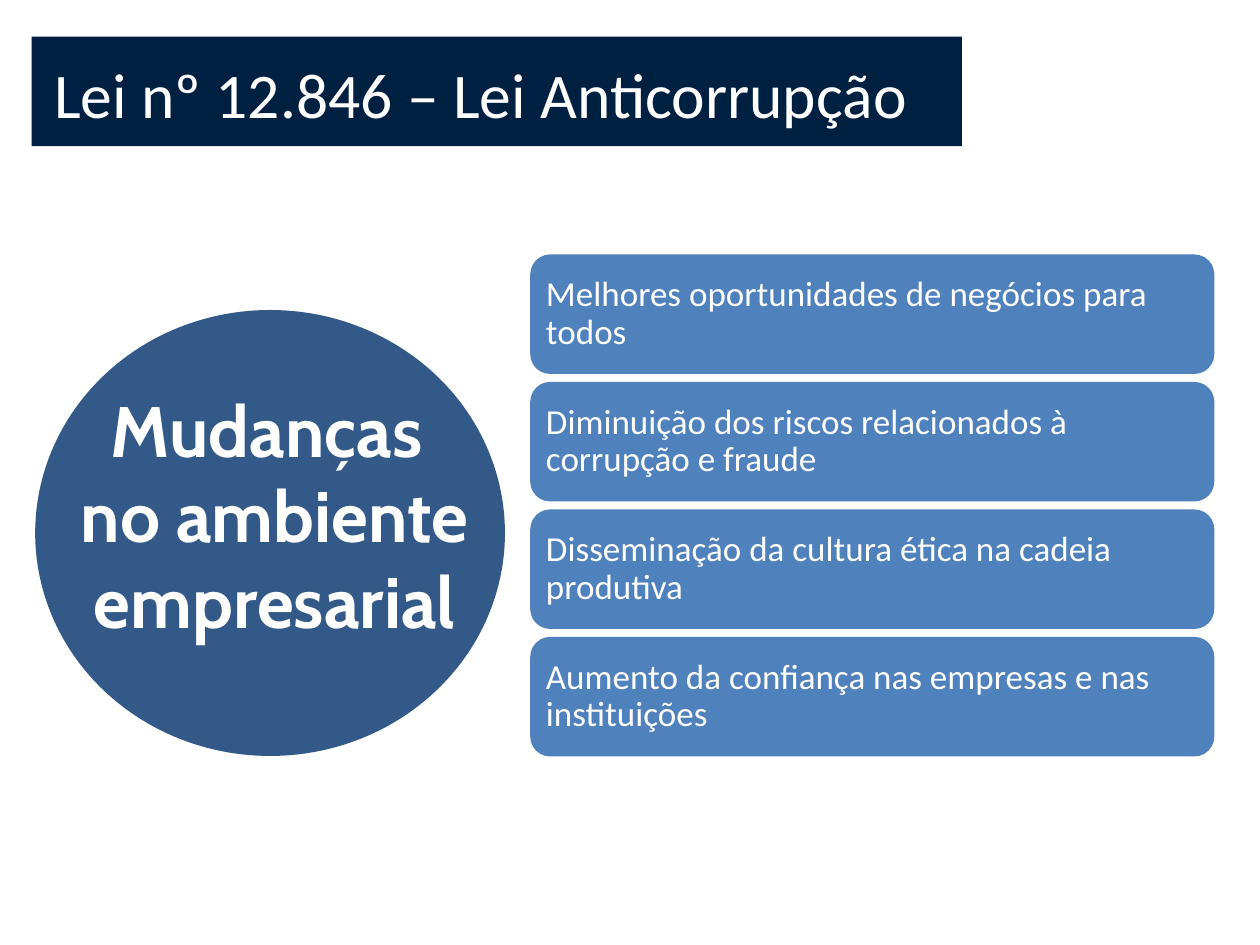
import pptx
import pptx.util
import pptx.dml.color
import pptx.enum.shapes
import pptx.enum.text
import pptx.oxml.ns
import lxml.etree

Cm = pptx.util.Cm
RGB = pptx.dml.color.RGBColor
SHAPE = pptx.enum.shapes.MSO_SHAPE
ALIGN = pptx.enum.text.PP_ALIGN
ANCHOR = pptx.enum.text.MSO_ANCHOR

NAVY = RGB(0x00, 0x20, 0x42)
DEEP = RGB(0x1F, 0x49, 0x7D)
BLUE = RGB(0x4F, 0x81, 0xBD)
WHITE = RGB(0xFF, 0xFF, 0xFF)

GAINS = [
    "Melhores oportunidades de negócios para todos",
    "Diminuição dos riscos relacionados à corrupção e fraude",
    "Disseminação da cultura ética na cadeia produtiva",
    "Aumento da confiança nas empresas e nas instituições",
]


def write(frame, text, size, font="Calibri", bold=False, align=ALIGN.LEFT,
          anchor=ANCHOR.TOP, pad=None, space=None):
    """Fill a text frame, one paragraph for each line of text."""
    frame.word_wrap = True
    frame.vertical_anchor = anchor
    if pad is not None:
        frame.margin_left = frame.margin_right = pad
        frame.margin_top = frame.margin_bottom = pad
    for i, line in enumerate(text.split("\n")):
        para = frame.add_paragraph() if i else frame.paragraphs[0]
        para.alignment = align
        para.line_spacing = space
        run = para.add_run()
        run.text = line
        run.font.name = font
        run.font.size = pptx.util.Pt(size)
        run.font.bold = bold
        run.font.color.rgb = WHITE


def label(slide, box, text, **style):
    frame = slide.shapes.add_textbox(*map(Cm, box)).text_frame
    write(frame, text, **style)


def block(slide, kind, box, color, alpha=None):
    """Add a flat shape without outline; alpha is opacity in percent."""
    shape = slide.shapes.add_shape(kind, *map(Cm, box))
    shape.shadow.inherit = False
    shape.line.fill.background()
    shape.fill.solid()
    shape.fill.fore_color.rgb = color
    if alpha is not None:
        tone = shape.fill._xPr.find(".//" + pptx.oxml.ns.qn("a:srgbClr"))
        node = lxml.etree.SubElement(tone, pptx.oxml.ns.qn("a:alpha"))
        node.set("val", str(alpha * 1000))
    return shape


def title(slide):
    block(slide, SHAPE.RECTANGLE, (0.64, 0.74, 18.75, 2.21), NAVY)
    label(slide, (0.84, 0.99, 18.31, 2.57),
          "Lei nº 12.846 – Lei Anticorrupção", size=36.3)


def theme(slide):
    block(slide, SHAPE.OVAL, (0.71, 6.25, 9.47, 8.99), DEEP, alpha=91)
    label(slide, (0.61, 7.65, 9.86, 6.25),
          "Mudanças \nno ambiente empresarial",
          size=40.8, font="Cabin", bold=True, align=ALIGN.CENTER)


def cards(slide, top=5.13, step=2.57):
    for i, gain in enumerate(GAINS):
        box = (10.69, top + i * step, 13.79, 2.41)
        card = block(slide, SHAPE.ROUNDED_RECTANGLE, box, BLUE)
        write(card.text_frame, gain, size=20, anchor=ANCHOR.MIDDLE,
              pad=Cm(0.2), space=0.9)


def main():
    deck = pptx.Presentation()
    deck.slide_width, deck.slide_height = Cm(25.4), Cm(19.05)
    slide = deck.slides.add_slide(deck.slide_layouts[6])
    title(slide)
    theme(slide)
    cards(slide)
    deck.save("out.pptx")


if __name__ == "__main__":
    main()
